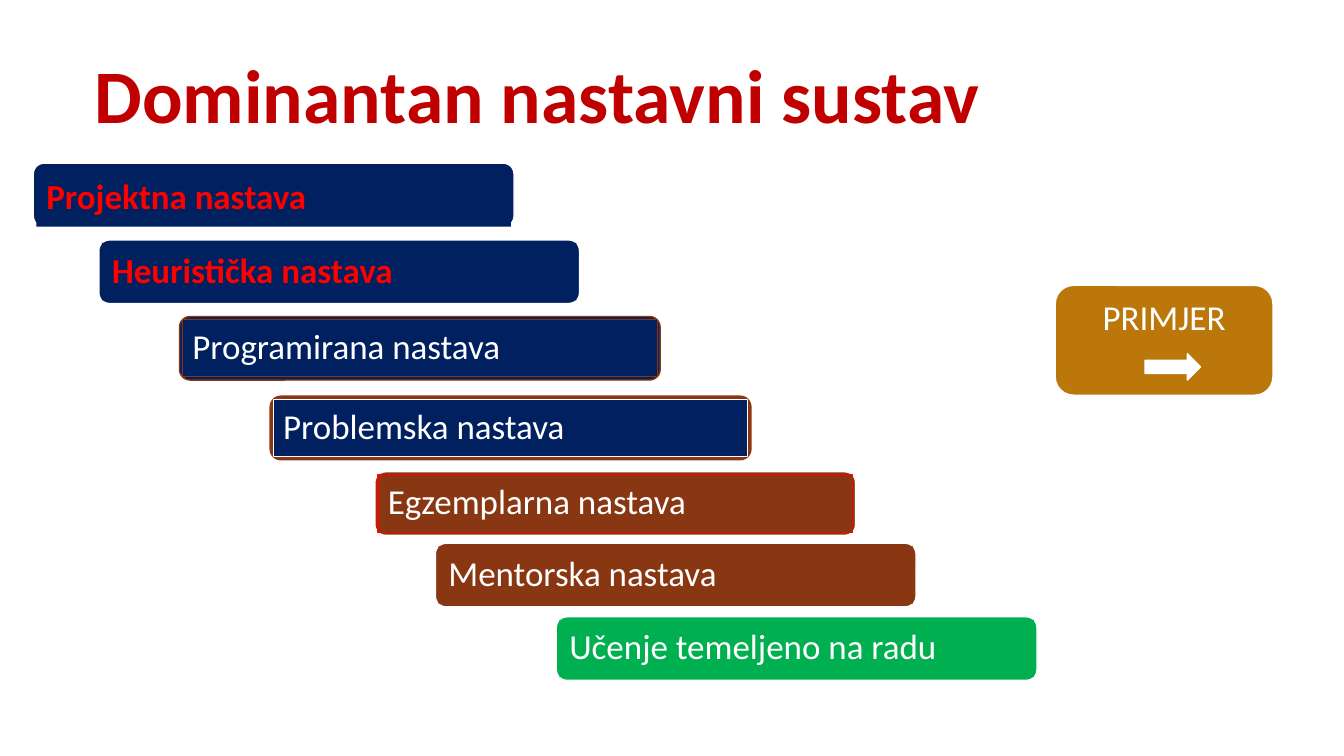
import pptx
import pptx.util
import pptx.dml.color
import pptx.enum.shapes
import pptx.enum.text

Pt = pptx.util.Pt
KIND = pptx.enum.shapes.MSO_SHAPE
ALIGN = pptx.enum.text.PP_ALIGN
ANCHOR = pptx.enum.text.MSO_ANCHOR

HUES = {"navy": "002060", "rust": "893713", "green": "00B050",
        "gold": "BC770B", "white": "FFFFFF", "red": "FF0000",
        "title": "C00000"}
FONT = "Calibri"
TITLE = "Dominantan nastavni sustav"
# text, left, top, back fill, back line, label fill, label line, font colour
STEPS = [
    ("Projektna nastava", 23.8, 116.6, "navy", "white", "navy", None, "red"),
    ("Heuristička nastava", 70.6, 171.4, "navy", "white", "navy", None, "red"),
    ("Programirana nastava", 128.2, 226.1, "navy", "rust", "navy", "rust", "white"),
    ("Problemska nastava", 193, 283, "rust", "rust", "navy", "white", "white"),
    ("Egzemplarna nastava", 267.8, 337, "rust", "white", "rust", "red", "white"),
    ("Mentorska nastava", 311, 388.1, "rust", "white", "rust", None, "white"),
    ("Učenje temeljeno na radu", 397.4, 440.6, "green", "white", "green", None, "white"),
]
WIDTH, HEIGHT, INSET = 343.4, 45.4, 2.2
DROP = 2.1  # the first label sits lower, on the edge of its bar


def tint(name):
    return pptx.dml.color.RGBColor.from_string(HUES[name])


def draw(group, kind, box, fill, line=None, width=1):
    shape = group.shapes.add_shape(kind, *[Pt(n) for n in box])
    shape.shadow.inherit = False
    shape.fill.solid()
    shape.fill.fore_color.rgb = tint(fill)
    if line:
        shape.line.color.rgb = tint(line)
        shape.line.width = Pt(width)
    else:
        shape.line.fill.background()
    return shape


def write(shape, text, size, hue, bold, align, anchor, pad=3.6):
    frame = shape.text_frame
    frame.word_wrap = True
    frame.auto_size = pptx.enum.text.MSO_AUTO_SIZE.NONE
    frame.vertical_anchor = anchor
    frame.margin_left = frame.margin_right = Pt(7.2)
    frame.margin_top = frame.margin_bottom = Pt(pad)
    frame.text = text
    para = frame.paragraphs[0]
    para.alignment = align
    para.font.name, para.font.size, para.font.bold = FONT, Pt(size), bold
    para.font.color.rgb = tint(hue)
    return para


def main():
    deck = pptx.Presentation()
    deck.slide_width, deck.slide_height = Pt(960), Pt(540)
    slide = deck.slides.add_slide(deck.slide_layouts[5])

    title = slide.shapes.title
    title.left, title.top = Pt(60.5), Pt(-0.7)
    title.width, title.height = Pt(827.3), Pt(103.7)
    para = write(title, TITLE, 54, "title", True, ALIGN.LEFT, ANCHOR.BOTTOM)
    para.line_spacing = Pt(40)

    stairs = slide.shapes.add_group_shape()
    for i, (text, x, y, fill, line, face, edge, hue) in enumerate(STEPS):
        draw(stairs, KIND.ROUNDED_RECTANGLE, (x, y, WIDTH, HEIGHT), fill, line)
        top = y + INSET + (DROP if i == 0 else 0)
        box = (x + INSET, top, WIDTH - 2 * INSET, HEIGHT - 2 * INSET)
        label = draw(stairs, KIND.RECTANGLE, box, face, edge, 0)
        para = write(label, text, 25, hue, hue == "red", ALIGN.LEFT,
                     ANCHOR.MIDDLE, 7.2)
        para.line_spacing = 0.9
        para.space_after = Pt(8.8)

    sample = slide.shapes.add_group_shape()
    button = draw(sample, KIND.ROUNDED_RECTANGLE, (753.8, 203.8, 155.5, 78.5),
                  "gold", "white")
    write(button, "PRIMJER", 25, "white", False, ALIGN.CENTER, ANCHOR.TOP)
    draw(sample, KIND.RIGHT_ARROW, (817.9, 252.7, 39.6, 18.7), "white", "white")

    deck.save("out.pptx")


if __name__ == "__main__":
    main()
